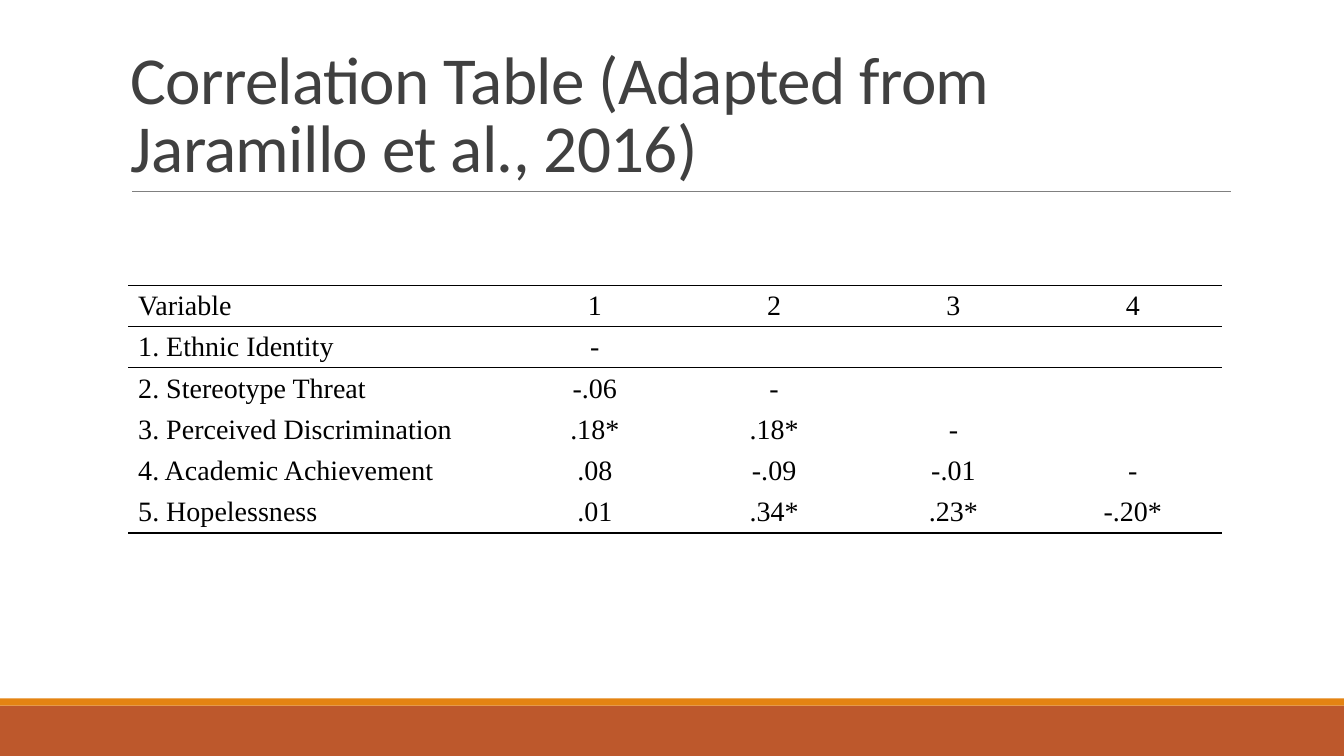
import pptx
import pptx.dml.color
import pptx.enum.shapes
import pptx.enum.text
import pptx.oxml
import pptx.oxml.ns
import pptx.util
from pptx.util import Cm

TITLE = "Correlation Table (Adapted from Jaramillo et al., 2016)"
CORRELATIONS = [
    ("Variable", "1", "2", "3", "4"),
    ("1. Ethnic Identity", "-", "", "", ""),
    ("2. Stereotype Threat", "-.06", "-", "", ""),
    ("3. Perceived Discrimination", ".18*", ".18*", "-", ""),
    ("4. Academic Achievement", ".08", "-.09", "-.01", "-"),
    ("5. Hopelessness", ".01", ".34*", ".23*", "-.20*"),
]
RULED_EDGES = (0, 1, 2, 6)  # horizontal table edges, counted from the top
COLORS = {
    "band": "BD582C",
    "stripe": "E48312",
    "rule": "808080",
    "title": "404040",
    "table": "000000",
}
SLIDE_WIDTH, SLIDE_HEIGHT = 33.87, 19.05
BAND_TOP, STRIPE_HEIGHT = 17.78, 0.18
TABLE_LEFT, TABLE_TOP = 3.23, 7.19
NAME_WIDTH, VALUE_WIDTH, ROW_HEIGHT = 9.5, 4.52, 1.04
NO_STYLE_NO_GRID = "{2D5ABB26-0587-4C30-8999-92F81FD0307C}"
ALIGN = pptx.enum.text.PP_ALIGN
ANCHOR = pptx.enum.text.MSO_ANCHOR


def rgb(name):
    return pptx.dml.color.RGBColor.from_string(COLORS[name])


def write(frame, text, font, size, color, align=ALIGN.LEFT,
          line_spacing=None, tracking=None):
    """Put one formatted span in a text frame; tracking is in 1/100 pt."""
    para = frame.paragraphs[0]
    para.alignment = align
    para.line_spacing = line_spacing
    span = para.add_run()
    span.text = text
    span.font.name = font
    span.font.size = pptx.util.Pt(size)
    span.font.color.rgb = rgb(color)
    if tracking is not None:
        span.font._element.set("spc", str(tracking))


def add_bar(slide, top, height, color):
    bar = slide.shapes.add_shape(
        pptx.enum.shapes.MSO_SHAPE.RECTANGLE,
        0, Cm(top), Cm(SLIDE_WIDTH), Cm(height))
    bar.shadow.inherit = False
    bar.fill.solid()
    bar.fill.fore_color.rgb = rgb(color)
    bar.line.fill.background()


def add_title(slide):
    box = slide.shapes.add_textbox(Cm(3.05), Cm(0.79), Cm(27.94), Cm(4.04))
    frame = box.text_frame
    frame.word_wrap = True
    frame.vertical_anchor = ANCHOR.BOTTOM
    write(frame, TITLE, "Calibri", 48, "title",
          line_spacing=0.85, tracking=-50)

    rule = slide.shapes.add_connector(
        pptx.enum.shapes.MSO_CONNECTOR.STRAIGHT,
        Cm(3.33), Cm(4.83), Cm(31.01), Cm(4.83))
    rule.line.color.rgb = rgb("rule")
    rule.line.width = pptx.util.Pt(0.5)
    rule._element.spPr.append(pptx.oxml.parse_xml(
        f'<a:effectLst {pptx.oxml.ns.nsdecls("a")}/>'))


def set_border(cell, side, visible):
    fill = (f'<a:solidFill><a:srgbClr val="{COLORS["table"]}"/></a:solidFill>'
            if visible else "<a:noFill/>")
    cell._tc.get_or_add_tcPr().append(pptx.oxml.parse_xml(
        f'<a:ln{side} {pptx.oxml.ns.nsdecls("a")} w="12700">{fill}</a:ln{side}>'))


def add_correlation_table(slide):
    rows, columns = len(CORRELATIONS), len(CORRELATIONS[0])
    widths = [NAME_WIDTH] + [VALUE_WIDTH] * (columns - 1)
    table = slide.shapes.add_table(
        rows, columns, Cm(TABLE_LEFT), Cm(TABLE_TOP),
        Cm(sum(widths)), Cm(rows * ROW_HEIGHT)).table
    table.first_row = table.horz_banding = False
    style = table._tbl.tblPr.find(pptx.oxml.ns.qn("a:tableStyleId"))
    style.text = NO_STYLE_NO_GRID
    for column, width in zip(table.columns, widths):
        column.width = Cm(width)

    for r, values in enumerate(CORRELATIONS):
        table.rows[r].height = Cm(ROW_HEIGHT)
        for c, value in enumerate(values):
            cell = table.cell(r, c)
            cell.margin_top = cell.margin_bottom = 0
            cell.vertical_anchor = ANCHOR.MIDDLE
            set_border(cell, "T", r in RULED_EDGES)
            set_border(cell, "B", r + 1 in RULED_EDGES)
            cell.fill.background()
            if value:
                write(cell.text_frame, value, "Times New Roman", 20, "table",
                      align=ALIGN.CENTER if c else ALIGN.LEFT)


def main():
    deck = pptx.Presentation()
    deck.slide_width = Cm(SLIDE_WIDTH)
    deck.slide_height = Cm(SLIDE_HEIGHT)
    slide = deck.slides.add_slide(deck.slide_layouts[6])
    add_bar(slide, BAND_TOP, SLIDE_HEIGHT - BAND_TOP, "band")
    add_bar(slide, BAND_TOP - STRIPE_HEIGHT, STRIPE_HEIGHT, "stripe")
    add_title(slide)
    add_correlation_table(slide)
    deck.save("out.pptx")


if __name__ == "__main__":
    main()
